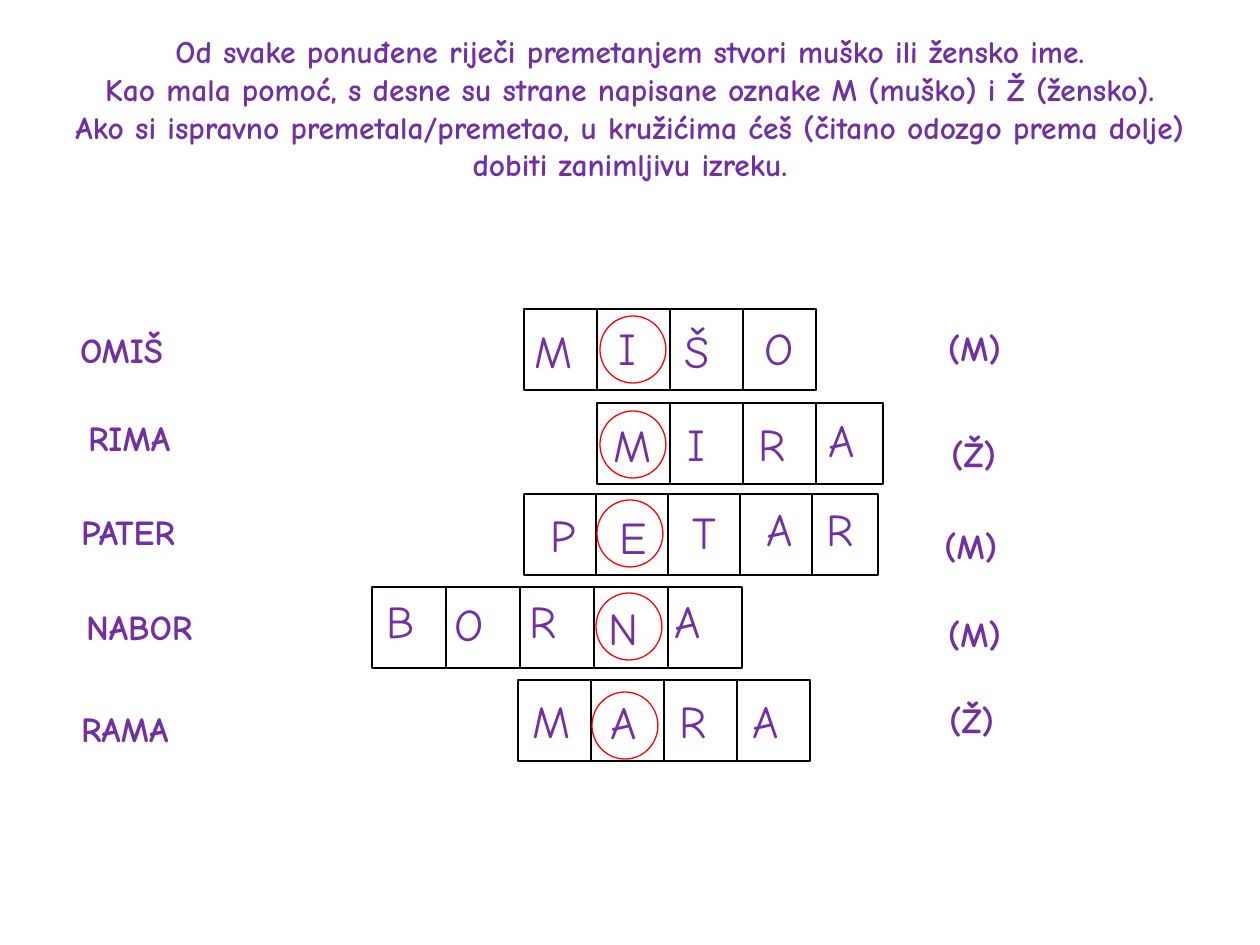
from pptx import Presentation
from pptx.dml.color import RGBColor
from pptx.enum.shapes import MSO_SHAPE
from pptx.enum.text import PP_ALIGN
from pptx.util import Pt

PX = 914400 / 126
RECT, OVAL = MSO_SHAPE.RECTANGLE, MSO_SHAPE.OVAL
LEFT, CENTER = PP_ALIGN.LEFT, PP_ALIGN.CENTER
INK, RED, BLACK = "7030A0", "FF0000", "000000"

TITLE = [
    "Od svake ponuđene riječi premetanjem stvori muško ili žensko ime.",
    "Kao mala pomoć, s desne su strane napisane oznake M (muško) i Ž (žensko).",
    "Ako si ispravno premetala/premetao, u kružićima ćeš "
    "(čitano odozgo prema dolje) dobiti zanimljivu izreku.",
]

# word, hint: (text, left, top); grid: (left, top, step, last width)
# ring: (left, top); name: (letter, left, top) for each cell
ROWS = [
    dict(word=("OMIŠ", 80, 328), hint=("(M)", 948, 326),
         grid=(524, 309, 73, 73), ring=(600, 316),
         name=[("M", 535, 323), ("I", 619, 320), ("Š", 685, 323),
               ("O", 765, 320)]),
    dict(word=("RIMA", 88, 416), hint=("(Ž)", 951, 432),
         grid=(597, 403, 73, 67), ring=(600, 411),
         name=[("M", 614, 417), ("I", 688, 416), ("R", 759, 416),
               ("A", 829, 412)]),
    dict(word=("PATER", 81, 510), hint=("(M)", 944, 524),
         grid=(524, 494, 72, 66), ring=(597, 500),
         name=[("P", 551, 507), ("E", 620, 509), ("T", 693, 504),
               ("A", 767, 501), ("R", 827, 501)]),
    dict(word=("NABOR", 86, 605), hint=("(M)", 948, 612),
         grid=(372, 587, 74, 74), ring=(596, 593),
         name=[("B", 387, 593), ("O", 455, 596), ("R", 530, 593),
               ("N", 609, 600), ("A", 675, 593)]),
    dict(word=("RAMA", 81, 707), hint=("(Ž)", 949, 698),
         grid=(518, 680, 73, 73), ring=(592, 692),
         name=[("M", 533, 693), ("A", 611, 694), ("R", 680, 693),
               ("A", 753, 693)]),
]


def emu(*nums):
    return [round(n * PX) for n in nums]


def color(code):
    return RGBColor.from_string(code)


class Page:
    font = "Comic Neue"

    def __init__(self, slide):
        self.slide = slide

    def shape(self, kind, box, line):
        item = self.slide.shapes.add_shape(kind, *emu(*box))
        item.shadow.inherit = False
        item.fill.background()
        item.line.color.rgb = color(line)
        item.line.width = Pt(0.75)

    def text(self, lines, box, size, bold=False, align=LEFT, inset=(0, 0)):
        frame = self.slide.shapes.add_textbox(*emu(*box)).text_frame
        side, edge = emu(*inset)
        form = dict(word_wrap=True, margin_left=side, margin_right=side,
                    margin_top=edge, margin_bottom=edge)
        for key, val in form.items():
            setattr(frame, key, val)
        for num, line in enumerate(lines):
            para = frame.add_paragraph() if num else frame.paragraphs[0]
            para.alignment = align
            run = para.add_run()
            run.text = line
            look = dict(name=self.font, size=Pt(size), bold=bold)
            for key, val in look.items():
                setattr(run.font, key, val)
            run.font.color.rgb = color(INK)

    def label(self, text, left, top):
        self.text([text], (left, top, 130, 43), 20, bold=True)

    def letter(self, text, left, top):
        self.text([text], (left, top, 40, 55), 26)

    def row(self, word, hint, grid, ring, name):
        left, top, step, last = grid
        self.label(*word)
        self.label(*hint)
        for num in range(len(name)):
            width = last if num == len(name) - 1 else step
            self.shape(RECT, (left + num * step, top, width, 81), BLACK)
        self.shape(OVAL, (*ring, 66, 67), RED)
        for item in name:
            self.letter(*item)


def main():
    deck = Presentation()
    deck.slide_width, deck.slide_height = emu(1260, 945)
    page = Page(deck.slides.add_slide(deck.slide_layouts[6]))

    # Word rows: given word, letter cells, ring and hint
    for row in ROWS:
        page.row(**row)

    # Instructions
    page.text(TITLE, (24, 26, 1212, 165), 18, bold=True, align=CENTER,
              inset=(13, 6))

    deck.save("out.pptx")


if __name__ == "__main__":
    main()
